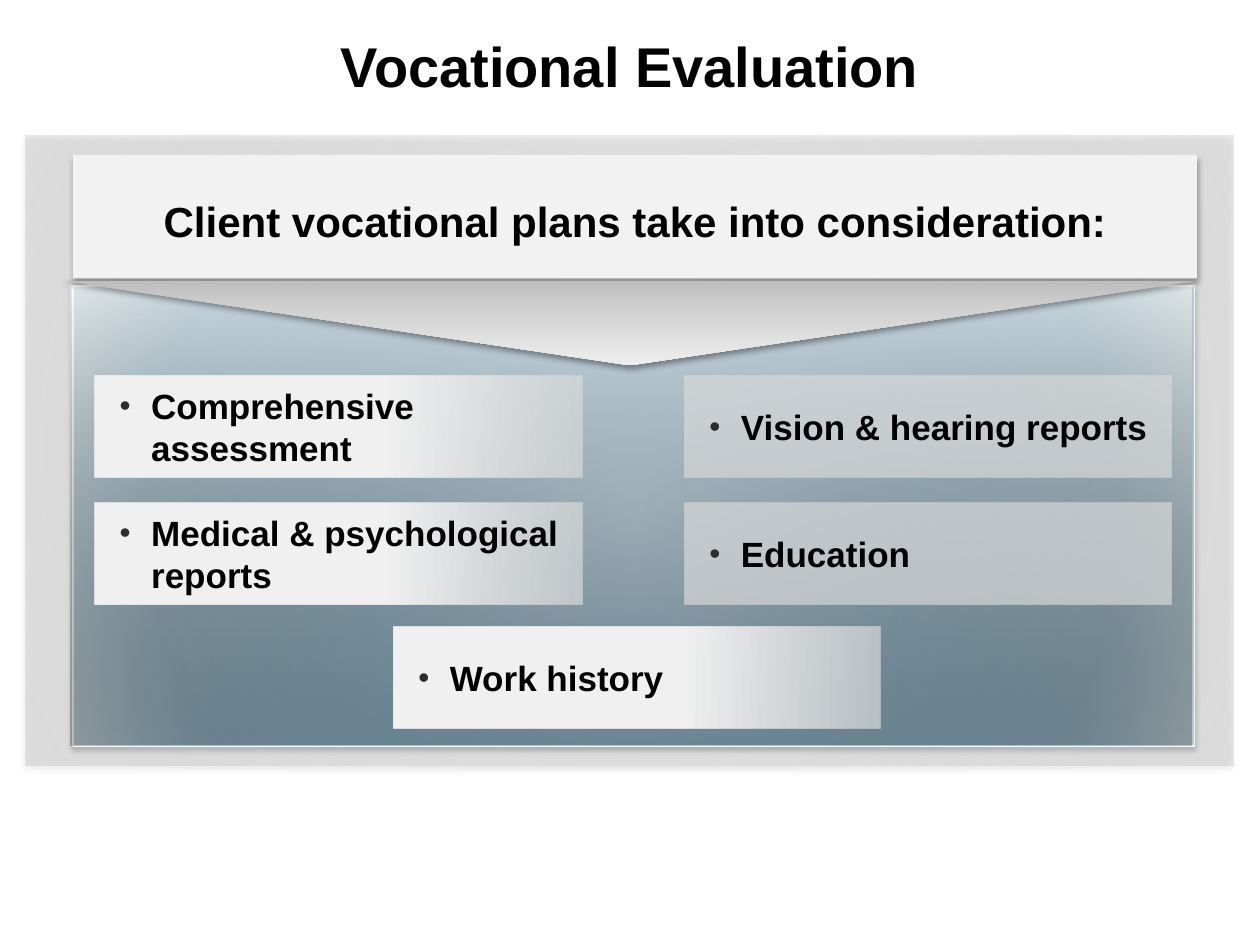
from lxml import etree
from pptx import Presentation
from pptx.dml.color import RGBColor
from pptx.enum.shapes import MSO_SHAPE as Geometry
from pptx.enum.text import MSO_ANCHOR as Anchor, PP_ALIGN as Align
from pptx.oxml.ns import qn
from pptx.util import Inches, Pt

FONT = "Arial"
BLACK = RGBColor(0x00, 0x00, 0x00)
WHITE = RGBColor(0xFF, 0xFF, 0xFF)
BULLET_GREY = RGBColor(0x2D, 0x2D, 0x2D)
PALE_GREY = RGBColor(0xF2, 0xF2, 0xF2)
CARD_EDGE = RGBColor(0xD9, 0xD9, 0xD9)
FRAME_GREY = RGBColor(0x97, 0x97, 0x97)
PANEL_LINE = RGBColor(0xF0, 0xF8, 0xF9)
PANEL_STOPS = [(0, RGBColor(0xB2, 0xCF, 0xE2), 88),
               (80, RGBColor(0x4F, 0x9A, 0xBF), 42),
               (100, RGBColor(0xC4, 0xE0, 0xEA), 52)]
ARROW_STOPS = [(0, RGBColor(0xBD, 0xBD, 0xBD), 100),
               (35, RGBColor(0xD1, 0xD1, 0xD1), 100),
               (100, RGBColor(0xEE, 0xEE, 0xEE), 100)]
CARD_STOPS = [(0, PALE_GREY, 100), (59, PALE_GREY, 100), (100, CARD_EDGE, 70)]
CENTRE = (50, 50, 50, 50)
TOP_LEFT = (0, 0, 100, 100)


def add(parent, tag, **attributes):
    """Append an XML child, turning attribute values into text."""
    return etree.SubElement(parent, qn(tag), {k: str(v) for k, v in attributes.items()})


def add_colour(parent, colour, opacity=100):
    node = add(parent, "a:srgbClr", val=colour)
    if opacity < 100:
        add(node, "a:alpha", val=opacity * 1000)


def set_gradient(shape, stops, angle=0, path=None, focus=CENTRE):
    """Fill with (position, colour, opacity) stops, along an angle or a path."""
    gradient = etree.Element(qn("a:gradFill"), rotWithShape="1")
    stop_list = add(gradient, "a:gsLst")
    for position, colour, opacity in stops:
        add_colour(add(stop_list, "a:gs", pos=position * 1000), colour, opacity)
    if path:
        sides = {side: value * 1000 for side, value in zip("ltrb", focus)}
        add(add(gradient, "a:path", path=path), "a:fillToRect", **sides)
    else:
        add(gradient, "a:lin", ang=angle * 60000, scaled=0)
    shape._element.spPr.find(qn("a:prstGeom")).addnext(gradient)


def set_shadow(shape, opacity, blur, distance):
    effects = shape._element.spPr.find(qn("a:effectLst"))
    shadow = add(effects, "a:outerShdw", blurRad=Pt(blur), dist=Pt(distance),
                 dir=90 * 60000, rotWithShape=0)
    add_colour(shadow, BLACK, opacity)


def add_plain_shape(slide, geometry, box):
    shape = slide.shapes.add_shape(geometry, *map(Inches, box))
    shape.shadow.inherit = False
    shape.line.fill.background()
    return shape


def format_text(frame, size, align):
    frame.word_wrap = True
    paragraph = frame.paragraphs[0]
    paragraph.alignment = align
    for run in paragraph.runs:
        run.font.name = FONT
        run.font.size = Pt(size)
        run.font.bold = True
        run.font.color.rgb = BLACK


def add_heading(slide, box, text, size):
    frame = slide.shapes.add_textbox(*map(Inches, box)).text_frame
    frame.text = text
    frame.vertical_anchor = Anchor.MIDDLE
    format_text(frame, size, Align.CENTER)


def add_backdrop(slide, box):
    """Grey frame, blue panel, banner and the shade over the panel."""
    left, top, width, height = box
    panel_box = (left + 0.38, top + 1.19, 8.9, 3.65)

    frame = add_plain_shape(slide, Geometry.RECTANGLE, box)
    set_gradient(frame, [(0, WHITE, 40), (100, FRAME_GREY, 20)], path="circle")
    set_shadow(frame, 35, 3.1, 1.8)

    panel = add_plain_shape(slide, Geometry.RECTANGLE, panel_box)
    set_gradient(panel, PANEL_STOPS, path="circle")
    panel.line.color.rgb = PANEL_LINE
    panel.line.width = Pt(0.75)
    set_shadow(panel, 35, 3.1, 1.8)

    banner = add_plain_shape(slide, Geometry.RECTANGLE, (left + 0.38, top + 0.15, 8.92, 0.98))
    banner.fill.solid()
    banner.fill.fore_color.rgb = PALE_GREY
    set_shadow(banner, 32, 3.5, 2.2)

    shade = add_plain_shape(slide, Geometry.RECTANGLE, (panel_box[0] - 0.02, *panel_box[1:]))
    set_gradient(shade, [(0, WHITE, 53), (100, BLACK, 24)], angle=90)


def add_down_arrow(slide, box):
    arrow = add_plain_shape(slide, Geometry.ISOSCELES_TRIANGLE, box)
    arrow._element.spPr.find(qn("a:xfrm")).set("flipV", "1")
    set_gradient(arrow, ARROW_STOPS, angle=270)
    set_shadow(arrow, 38, 3.1, 1.6)


def add_card(slide, box, text, path=None):
    card = add_plain_shape(slide, Geometry.RECTANGLE, box)
    set_gradient(card, CARD_STOPS, path=path, focus=TOP_LEFT)
    frame = card.text_frame
    frame.text = text
    frame.vertical_anchor = Anchor.MIDDLE
    frame.margin_left = Inches(0.2)
    frame.margin_top = frame.margin_right = frame.margin_bottom = 0
    properties = frame.paragraphs[0]._p.get_or_add_pPr()
    properties.set("marL", str(Inches(0.25)))
    properties.set("indent", str(Inches(-0.25)))
    add_colour(add(properties, "a:buClr"), BULLET_GREY)
    add(properties, "a:buSzPct", val=90000)
    add(properties, "a:buFont", typeface=FONT)
    add(properties, "a:buChar", char="•")
    format_text(frame, 20, Align.LEFT)


def add_cards(slide, box):
    """Two columns of two cards, and one card below near the middle."""
    left, top, width, height = box
    card_width, card_height, row_step = 3.87, 0.81, 1.01
    right = left + width - card_width
    columns = [(left, None, ["Comprehensive assessment", "Medical & psychological reports"]),
               (right, "rect", ["Vision & hearing reports", "Education"])]
    for x, path, labels in columns:
        for row, label in enumerate(labels):
            add_card(slide, (x, top + row * row_step, card_width, card_height), label, path)
    last_box = (left + 2.37, top + height - card_height, card_width, card_height)
    add_card(slide, last_box, "Work history")


def main():
    deck = Presentation()
    deck.slide_width, deck.slide_height = Inches(10), Inches(7.5)
    slide = deck.slides.add_slide(deck.slide_layouts[6])
    add_heading(slide, (0.5, 0.06, 9, 0.92), "Vocational Evaluation", 32)
    add_backdrop(slide, (0.2, 1.08, 9.59, 5))
    add_heading(slide, (0.58, 1.5, 8.92, 0.5),
                "Client vocational plans take into consideration:", 24)
    add_down_arrow(slide, (0.5, 2.23, 9, 0.67))
    add_cards(slide, (0.75, 2.98, 8.55, 2.8))
    deck.save("out.pptx")


if __name__ == "__main__":
    main()
